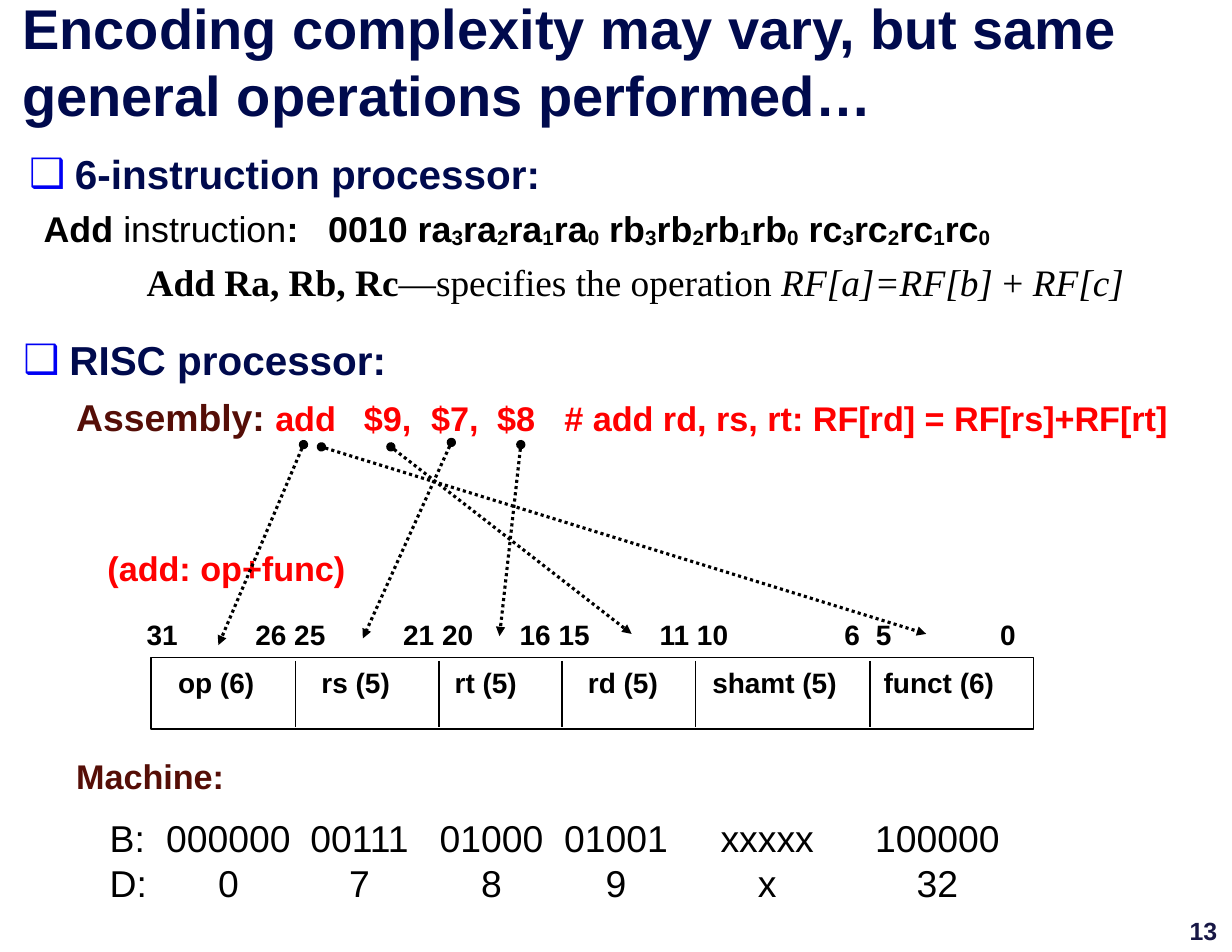
from lxml import etree
from pptx import Presentation
from pptx import util as u
from pptx.dml.color import RGBColor
from pptx.enum import dml, shapes, text
from pptx.oxml import ns

WIDTH, HEIGHT = u.Inches(11), u.Inches(8.5)
COLUMNS, ROWS = 110, 85

NAVY = RGBColor(0x00, 0x0A, 0x4D)
INK = RGBColor(0x17, 0x17, 0x45)
MAROON = RGBColor(0x55, 0x0E, 0x07)
RED = RGBColor(0xFF, 0x00, 0x00)
BLACK = RGBColor(0x00, 0x00, 0x00)
BULLET_BLUE = RGBColor(0x00, 0x00, 0xF4)

FRAME_LEFT, FRAME_TOP, FRAME_WIDTH, FRAME_HEIGHT = 13.5, 58.7, 78.8, 6.4
DIVIDERS = [26.4, 39.2, 50.2, 62.1, 77.7]
FIELDS = [("op (6)", 15.9), ("rs (5)", 28.7), ("rt (5)", 40.6),
          ("rd (5)", 52.5), ("shamt (5)", 63.6), ("funct (6)", 78.9)]
OPERAND_ARROWS = [
    (40.3, 39.5, 32.4, 57.0),
    (46.5, 39.7, 44.6, 56.8),
    (34.9, 39.9, 56.4, 56.6),
    (27.1, 39.7, 19.5, 57.6),
    (28.7, 39.9, 82.7, 56.6),
]


def column(count):
    return round(WIDTH * count / COLUMNS)


def row(count):
    return round(HEIGHT * count / ROWS)


def add_child(parent, tag, **attributes):
    values = {name: str(value) for name, value in attributes.items()}
    return etree.SubElement(parent, ns.qn(tag), values)


def set_tabs(para, left, stops, align):
    tabs = add_child(para._p.get_or_add_pPr(), "a:tabLst")
    for stop in stops:
        add_child(tabs, "a:tab", pos=column(stop - left), algn=align)


def set_bullet(para):
    props = para._p.get_or_add_pPr()
    props.set("marL", str(column(4.1)))
    props.set("indent", str(-column(4.1)))
    add_child(add_child(props, "a:buClr"), "a:srgbClr", val=BULLET_BLUE)
    add_child(props, "a:buFont", typeface="Arial")
    add_child(props, "a:buChar", char="❑")


def add_text(page, left, top, width, height, lines, size, color=BLACK, bold=True,
             name="Arial", tabs=(), tab_align="l", bullet=False):
    box = page.shapes.add_textbox(column(left), row(top), column(width), row(height))
    frame = box.text_frame
    frame.word_wrap = True
    frame.margin_left = frame.margin_right = frame.margin_top = frame.margin_bottom = 0
    for index, line in enumerate(lines):
        para = frame.paragraphs[0] if index == 0 else frame.add_paragraph()
        if bullet:
            set_bullet(para)
        if tabs:
            set_tabs(para, left, tabs, tab_align)
        para.font.name, para.font.size, para.font.bold = name, u.Pt(size), bold
        para.font.color.rgb = color
        for content, style in ([(line, {})] if isinstance(line, str) else line):
            add_span(para, content, **style)
    return box


def add_span(para, content, size=None, color=None, bold=None, italic=None, baseline=None):
    span = para.add_run()
    span.text = content
    if size:
        span.font.size = u.Pt(size)
    if color is not None:
        span.font.color.rgb = color
    span.font.bold, span.font.italic = bold, italic
    if baseline:
        span.font._element.set("baseline", str(baseline))


def add_line(page, x1, y1, x2, y2, weight):
    line = page.shapes.add_connector(
        shapes.MSO_CONNECTOR.STRAIGHT, column(x1), row(y1), column(x2), row(y2))
    line.line.color.rgb = BLACK
    line.line.width = u.Pt(weight)
    add_child(line._element.spPr, "a:effectLst")
    return line


def add_arrow(page, x1, y1, x2, y2):
    arrow = add_line(page, x1, y1, x2, y2, 2)
    arrow.line.dash_style = dml.MSO_LINE.ROUND_DOT
    outline = arrow.line._get_or_add_ln()
    add_child(outline, "a:headEnd", type="oval")
    add_child(outline, "a:tailEnd", type="triangle")


def register_bits(register):
    spans = []
    for bit in "3210":
        spans += [(register, {}), (bit, {"baseline": -6000})]
    return spans


def add_simple_processor(page):
    add_text(page, 2.6, 13.3, 50, 5, ["6-instruction processor:"], 26, NAVY, bullet=True)
    encoding = [("Add ", {}), ("instruction", {"bold": False}), (":\t0010 ", {})]
    for index, register in enumerate(["ra", "rb", "rc"]):
        if index:
            encoding.append((" ", {}))
        encoding += register_bits(register)
    add_text(page, 3.9, 18.5, 104, 5, [encoding], 23, tabs=[29.3])
    plain, italic = {"bold": False}, {"bold": False, "italic": True}
    add_text(page, 13.1, 23.1, 95, 5, [[
        ("Add Ra, Rb, Rc", {}), ("—specifies the operation ", plain),
        ("RF[a]=RF[b] ", italic), ("+ ", plain), ("RF[c]", italic),
    ]], 24, name="Times New Roman")


def add_assembly(page):
    add_text(page, 2.1, 29.9, 50, 5, ["RISC processor:"], 26, NAVY, bullet=True)
    add_text(page, 6.8, 35.2, 102, 5, [[
        ("Assembly: ", {"size": 24, "color": MAROON}),
        ("add\t$9,\t$7,\t$8\t# add rd, rs, rt: RF[rd] = RF[rs]+RF[rt]", {}),
    ]], 22, RED, tabs=[32.5, 38.5, 44.4, 50.4])
    add_text(page, 9.6, 48.9, 30, 4, ["(add: op+func)"], 22, RED)


def add_instruction_format(page):
    frame = page.shapes.add_shape(
        shapes.MSO_SHAPE.RECTANGLE, column(FRAME_LEFT), row(FRAME_TOP),
        column(FRAME_WIDTH), row(FRAME_HEIGHT))
    frame.shadow.inherit = False
    frame.fill.background()
    frame.line.color.rgb = BLACK
    frame.line.width = u.Pt(1)
    for x in DIVIDERS:
        add_line(page, x, 59, x, 64.9, 1)
    for label, left in FIELDS:
        add_text(page, left, 59.4, 14, 4.3, [label], 18)
    add_text(page, 13.1, 55.1, 80, 4.3, ["31\t26 25\t21 20\t16 15\t11 10\t6\t5\t0"], 18,
             tabs=[22.8, 36, 46.4, 58.9, 75.4, 78.2, 89.3])
    for ends in OPERAND_ARROWS:
        add_arrow(page, *ends)


def add_machine_code(page):
    add_text(page, 6.8, 67.4, 30, 4, ["Machine:"], 22, MAROON)
    add_text(page, 9.8, 72.8, 87, 8.8, [
        "B:\t000000\t00111\t01000\t01001\txxxxx\t100000",
        "D:\t0\t7\t8\t9\tx\t32",
    ], 24, bold=False, tabs=[20.4, 32.1, 43.9, 55, 68.5, 83.7], tab_align="ctr")


def main():
    deck = Presentation()
    deck.slide_width, deck.slide_height = WIDTH, HEIGHT
    page = deck.slides.add_slide(deck.slide_layouts[6])
    title = add_text(page, 2, 0.8, 106, 9.2, [
        "Encoding complexity may vary, but same general operations performed…"], 36, NAVY)
    title.text_frame.vertical_anchor = text.MSO_ANCHOR.MIDDLE
    add_simple_processor(page)
    add_assembly(page)
    add_instruction_format(page)
    add_machine_code(page)
    number = add_text(page, 105.6, 81.8, 3.7, 3, ["13"], 16, INK)
    number.text_frame.paragraphs[0].alignment = text.PP_ALIGN.CENTER
    deck.save("out.pptx")


if __name__ == "__main__":
    main()
